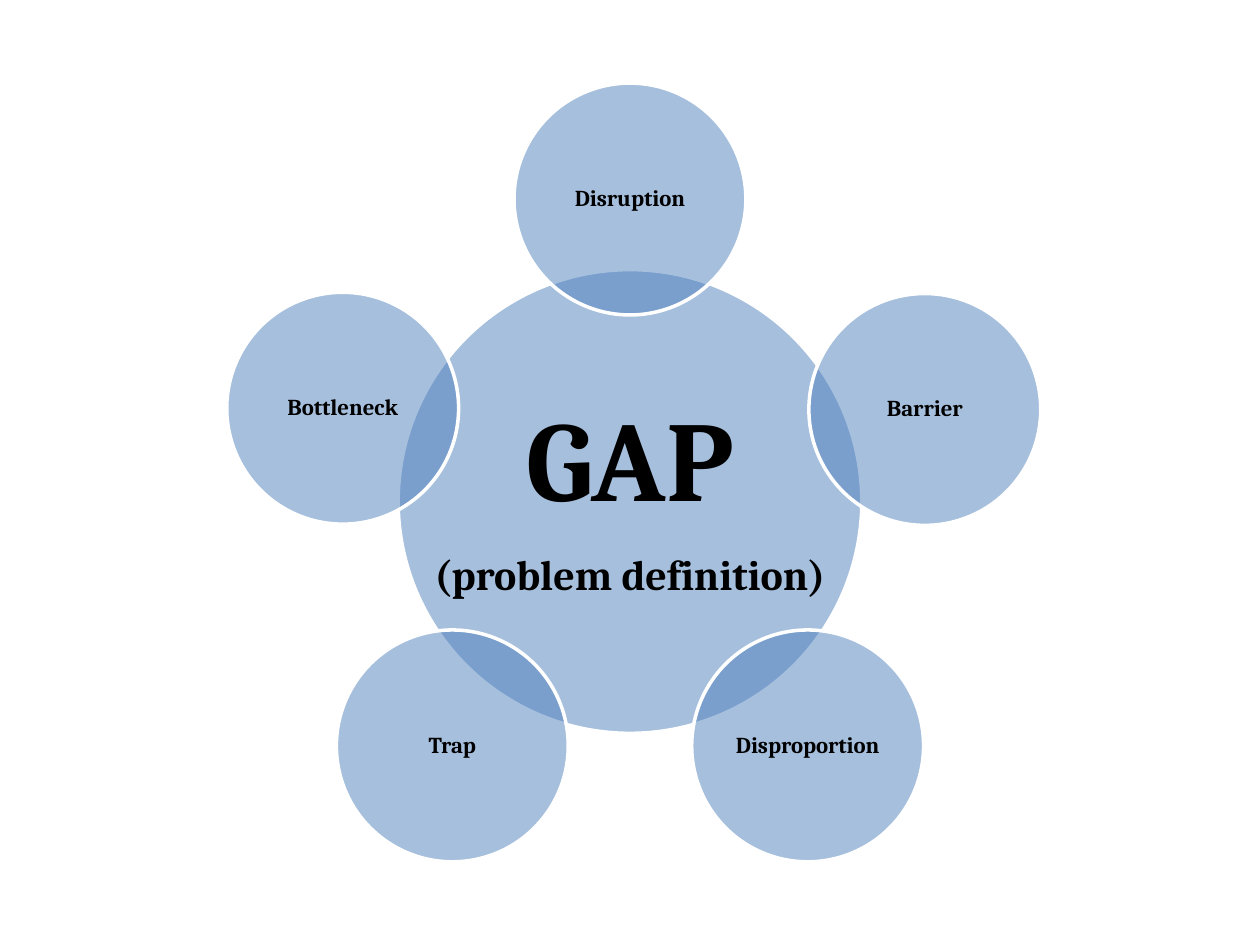
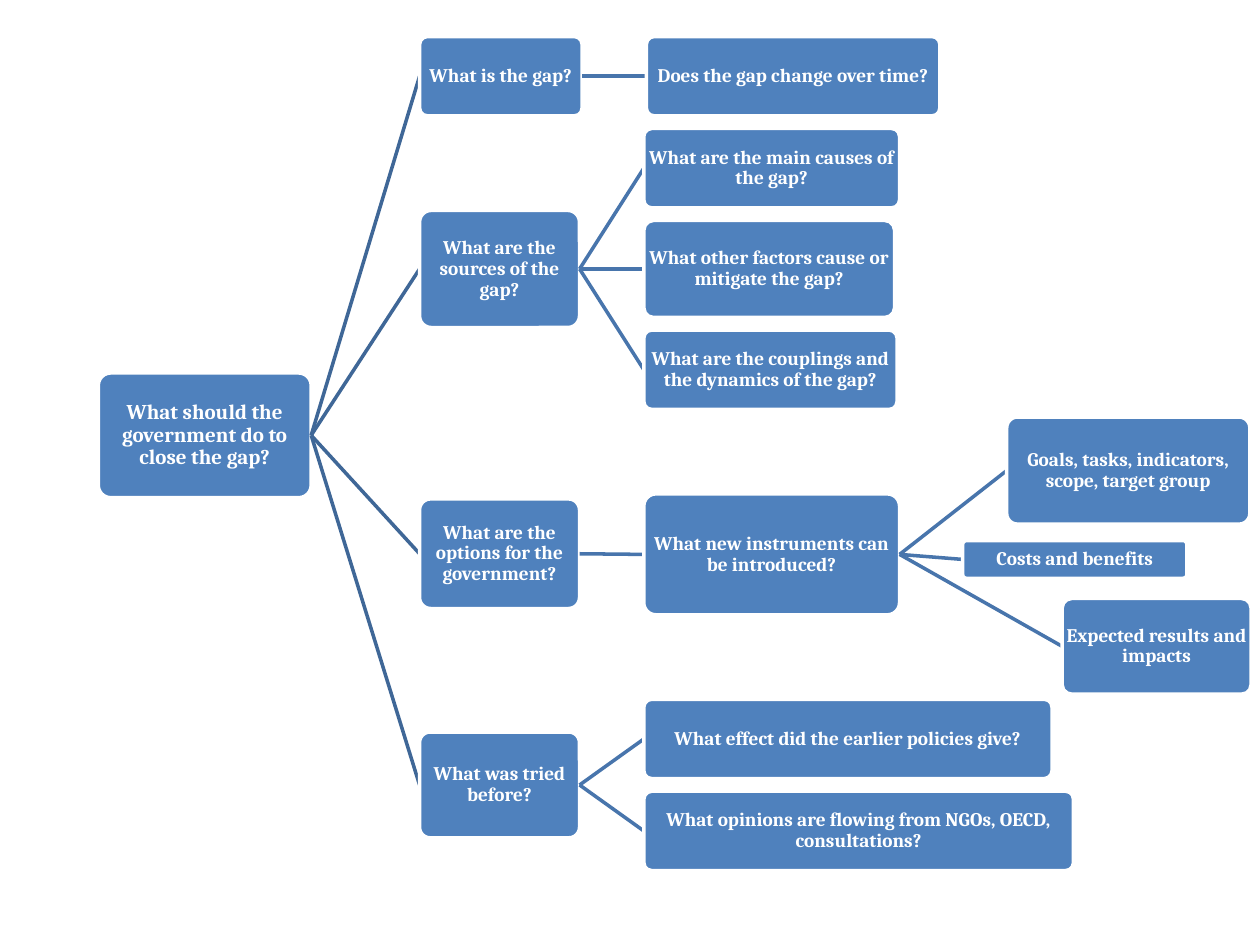
import math

from lxml import etree
from pptx import Presentation
from pptx.dml.color import RGBColor
from pptx.enum import shapes, text
from pptx.oxml import ns
from pptx.util import Emu, Pt

PX = 9144
BLUE = RGBColor(0x4F, 0x81, 0xBD)
ROOT_LINK = RGBColor(0x3F, 0x67, 0x97)
BRANCH_LINK = RGBColor(0x48, 0x75, 0xAC)
WHITE = RGBColor(0xFF, 0xFF, 0xFF)
BLACK = RGBColor(0, 0, 0)
FONT = "Cambria"
LINE_WIDTH = Pt(2)

GAP_CENTER = (500, 398)
GAP_DIAMETER = 368
CAUSE_DIAMETER = 184
RING_RADIUS = 240
CAUSES = [
    ("Disruption", 0, 0),
    ("Barrier", 6, 1),
    ("Disproportion", 0, 0),
    ("Trap", 0, 0),
    ("Bottleneck", 0, 0),
]

QUESTION_TREE = ("What should the government do to close the gap?", (78, 296, 169, 99), [
    ("What is the gap?", (333, 29, 129, 63), [
        ("Does the gap change over time?", (513, 29, 233, 63), []),
    ]),
    ("What are the sources of the gap?", (333, 167, 127, 93), [
        ("What are the main causes of the gap?", (511, 102, 203, 63), []),
        ("What other factors cause or mitigate the gap?", (511, 175, 199, 77), []),
        ("What are the couplings and the dynamics of the gap?", (511, 262, 201, 63), []),
    ]),
    ("What are the options for the government?", (333, 396, 127, 87), [
        ("What new instruments can be introduced?", (511, 392, 203, 96), [
            ("Goals, tasks, indicators, scope, target group", (799, 331, 193, 85), []),
            ("Costs and benefits", (764, 429, 178, 30), []),
            ("Expected results and impacts", (843, 475, 150, 76), []),
        ]),
    ]),
    ("What was tried before?", (333, 581, 127, 84), [
        ("What effect did the earlier policies give?", (511, 555, 324, 63), []),
        ("What opinions are flowing from NGOs, OECD, consultations?", (511, 628, 341, 63), []),
    ]),
])


def px(length):
    return Emu(length * PX)


def add_filled_shape(slide, kind, box):
    shape = slide.shapes.add_shape(kind, *map(px, box))
    shape.shadow.inherit = False
    shape.fill.solid()
    shape.fill.fore_color.rgb = BLUE
    shape.line.color.rgb = WHITE
    shape.line.width = LINE_WIDTH
    return shape


def write_lines(shape, lines, color, wrap=True):
    frame = shape.text_frame
    frame.word_wrap = wrap
    frame.vertical_anchor = text.MSO_ANCHOR.MIDDLE
    frame.margin_left = frame.margin_right = frame.margin_top = frame.margin_bottom = 0
    for index, (words, size, space_after) in enumerate(lines):
        paragraph = frame.add_paragraph() if index else frame.paragraphs[0]
        paragraph.text = words
        paragraph.alignment = text.PP_ALIGN.CENTER
        paragraph.line_spacing = 0.9
        paragraph.space_after = Pt(space_after)
        paragraph.font.name = FONT
        paragraph.font.size = Pt(size)
        paragraph.font.bold = True
        paragraph.font.color.rgb = color


def add_circle(slide, center, diameter, lines, wrap=True):
    left, top = (position - diameter // 2 for position in center)
    circle = add_filled_shape(slide, shapes.MSO_SHAPE.OVAL, (left, top, diameter, diameter))
    fill_color = circle._element.spPr.find(ns.qn("a:solidFill")).find(ns.qn("a:srgbClr"))
    etree.SubElement(fill_color, ns.qn("a:alpha")).set("val", "50000")
    write_lines(circle, lines, BLACK, wrap)


def add_question(slide, words, box, size):
    question = add_filled_shape(slide, shapes.MSO_SHAPE.ROUNDED_RECTANGLE, box)
    question.adjustments[0] = 0.1
    write_lines(question, [(words, size, 0)], WHITE)
    return question


def add_link(slide, parent, color):
    link = slide.shapes.add_connector(shapes.MSO_CONNECTOR.STRAIGHT, 0, 0, 0, 0)
    link.begin_connect(parent, 3)
    link.line.color.rgb = color
    link.line.width = LINE_WIDTH
    etree.SubElement(link._element.spPr, ns.qn("a:effectLst"))
    return link


def add_branch(slide, node, parent=None, level=0):
    words, box, children = node
    if parent is not None:
        link = add_link(slide, parent, ROOT_LINK if level == 1 else BRANCH_LINK)
    question = add_question(slide, words, box, 11 if level else 12)
    if parent is not None:
        link.end_connect(question, 1)
    for child in children:
        add_branch(slide, child, question, level + 1)


def build_gap_slide(slide):
    gap_lines = [("GAP", 65, 16), ("(problem definition)", 24, 0)]
    add_circle(slide, GAP_CENTER, GAP_DIAMETER, gap_lines, wrap=False)
    for index, (cause, shift_x, shift_y) in enumerate(CAUSES):
        angle = math.tau * index / len(CAUSES)
        center = (
            round(GAP_CENTER[0] + RING_RADIUS * math.sin(angle)) + shift_x,
            round(GAP_CENTER[1] - RING_RADIUS * math.cos(angle)) + shift_y,
        )
        add_circle(slide, center, CAUSE_DIAMETER, [(cause, 13, 0)])


def main():
    presentation = Presentation()
    presentation.slide_width = px(1000)
    presentation.slide_height = px(750)
    blank_layout = presentation.slide_layouts[6]
    build_gap_slide(presentation.slides.add_slide(blank_layout))
    add_branch(presentation.slides.add_slide(blank_layout), QUESTION_TREE)
    presentation.save("out.pptx")


if __name__ == "__main__":
    main()
